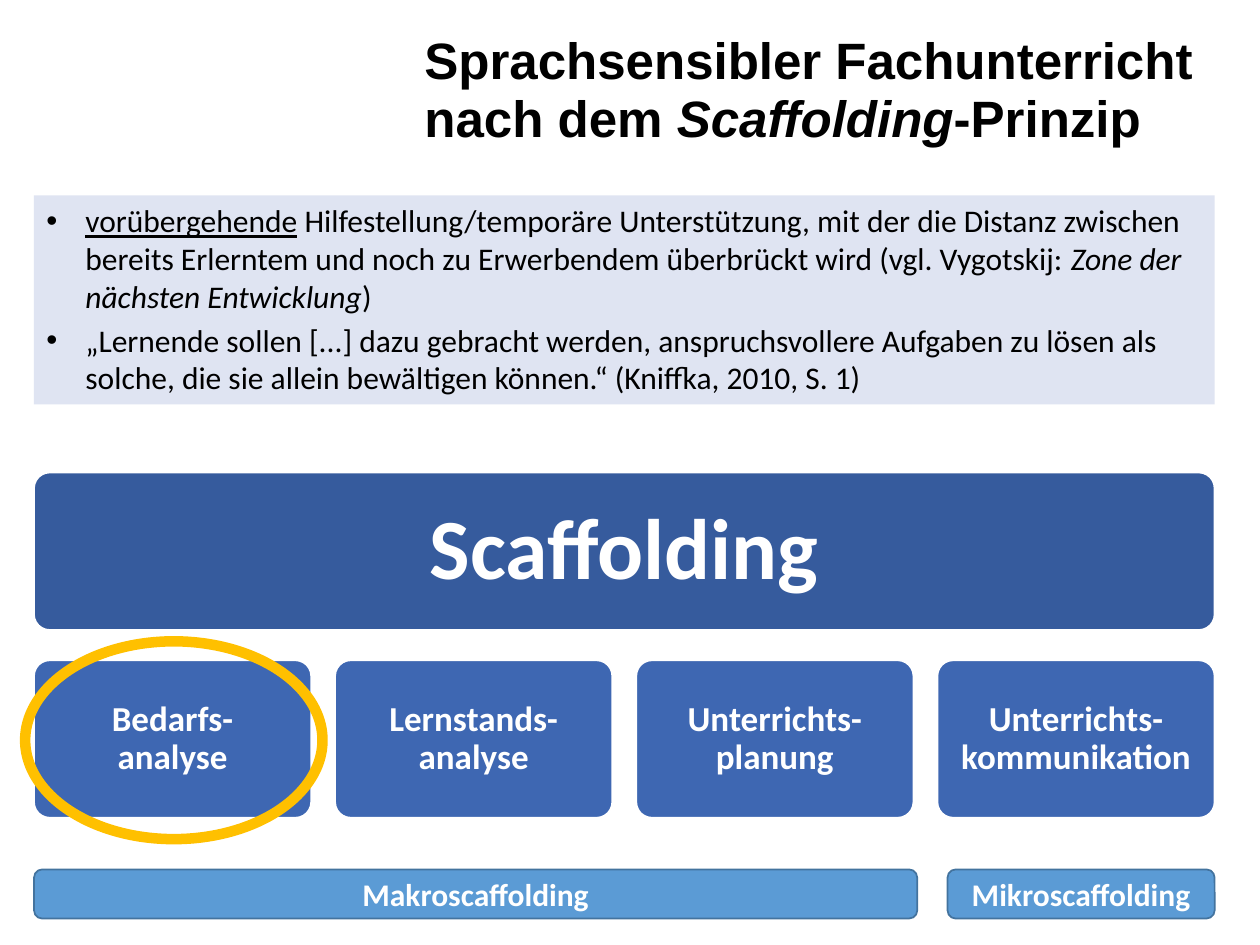
from dataclasses import dataclass

from lxml.etree import SubElement
from pptx import Presentation
from pptx.dml.color import RGBColor
from pptx.enum.shapes import MSO_SHAPE
from pptx.enum.text import MSO_ANCHOR, PP_ALIGN
from pptx.oxml.ns import qn
from pptx.util import Inches, Pt


@dataclass(frozen=True)
class Theme:
    black: str = "000000"
    white: str = "FFFFFF"
    definition: str = "DFE4F2"
    concept: str = "365B9D"
    step: str = "3E67B2"
    level: str = "5B9BD5"
    level_edge: str = "43739E"
    highlight: str = "FFC000"
    title_font: str = "Arial"
    body_font: str = "Calibri"
    title_size: float = 29.2
    concept_size: float = 49
    step_size: float = 20
    body_size: float = 18


THEME = Theme()
LEFT = 0.27
WIDTH = 9.37
STEP_WIDTH = 2.2
STEPS = [
    "Bedarfs-\nanalyse",
    "Lernstands-analyse",
    "Unterrichts-planung",
    "Unterrichts-kommunikation",
]
DEFINITIONS = [
    [
        ("vorübergehende", {"underline": True}),
        (" Hilfestellung/temporäre Unterstützung, mit der die Distanz zwischen "
         "bereits Erlerntem und noch zu Erwerbendem überbrückt wird "
         "(vgl. Vygotskij: ", {}),
        ("Zone der nächsten Entwicklung", {"italic": True}),
        (")", {}),
    ],
    [
        ("„Lernende sollen [...] dazu gebracht werden, anspruchsvollere Aufgaben "
         "zu lösen als solche, die sie allein bewältigen können.“ "
         "(Kniffka, 2010, S. 1)", {}),
    ],
]


def add_text(paragraph, text, *, size=THEME.body_size, color=THEME.black,
             font=THEME.body_font, bold=False, italic=False, underline=False):
    for index, line in enumerate(text.split("\n")):
        if index:
            paragraph.add_line_break()
        run = paragraph.add_run()
        run.text = line
        run.font.name = font
        run.font.size = Pt(size)
        run.font.bold = bold
        run.font.italic = italic
        run.font.underline = underline
        run.font.color.rgb = RGBColor.from_string(color)


def add_panel(slide, preset, box, fill=None, edge=None, edge_width=1, corner=None):
    panel = slide.shapes.add_shape(preset, *map(Inches, box))
    panel.shadow.inherit = False
    if corner is not None:
        panel.adjustments[0] = corner
    if fill:
        panel.fill.solid()
        panel.fill.fore_color.rgb = RGBColor.from_string(fill)
    else:
        panel.fill.background()
    if edge:
        panel.line.color.rgb = RGBColor.from_string(edge)
        panel.line.width = Pt(edge_width)
    else:
        panel.line.fill.background()
    return panel


def add_labelled_box(slide, box, label, fill, edge, size, corner, spacing, margin):
    panel = add_panel(slide, MSO_SHAPE.ROUNDED_RECTANGLE, box, fill, edge, corner=corner)
    frame = panel.text_frame
    frame.word_wrap = True
    frame.vertical_anchor = MSO_ANCHOR.MIDDLE
    frame.margin_left = frame.margin_right = Inches(margin)
    frame.margin_top = frame.margin_bottom = Inches(0.05)
    paragraph = frame.paragraphs[0]
    paragraph.alignment = PP_ALIGN.CENTER
    paragraph.line_spacing = spacing
    add_text(paragraph, label, size=size, color=THEME.white, bold=True)


def add_title(slide):
    title = slide.shapes.add_textbox(Inches(3.27), Inches(0.21), Inches(6.38), Inches(1.02))
    title.text_frame.word_wrap = True
    heading = title.text_frame.paragraphs[0]
    heading.line_spacing = 0.95
    for text, italic in [
        ("Sprachsensibler Fachunterricht nach dem ", False),
        ("Scaffolding", True),
        ("-Prinzip", False),
    ]:
        add_text(heading, text, size=THEME.title_size, font=THEME.title_font,
                 bold=True, italic=italic)


def make_bullet(paragraph):
    properties = paragraph._p.get_or_add_pPr()
    properties.set("marL", str(Inches(0.31)))
    properties.set("indent", str(Inches(-0.31)))
    SubElement(properties, qn("a:buFont")).set("typeface", THEME.title_font)
    SubElement(properties, qn("a:buChar")).set("char", "•")


def add_definitions(slide):
    panel = add_panel(slide, MSO_SHAPE.RECTANGLE, (LEFT, 1.55, WIDTH, 1.66), THEME.definition)
    frame = panel.text_frame
    frame.word_wrap = True
    frame.vertical_anchor = MSO_ANCHOR.TOP
    for index, passages in enumerate(DEFINITIONS):
        paragraph = frame.add_paragraph() if index else frame.paragraphs[0]
        make_bullet(paragraph)
        paragraph.alignment = PP_ALIGN.LEFT
        paragraph.space_after = Pt(3.3)
        for text, emphasis in passages:
            add_text(paragraph, text, **emphasis)


def add_scaffolding(slide):
    add_labelled_box(slide, (LEFT, 3.75, WIDTH, 1.25), "Scaffolding", THEME.concept,
                     THEME.white, THEME.concept_size, 0.1, 0.9, 0.2)
    pitch = (WIDTH - STEP_WIDTH) / (len(STEPS) - 1)
    for index, step in enumerate(STEPS):
        add_labelled_box(slide, (LEFT + index * pitch, 5.24, STEP_WIDTH, 1.25), step,
                         THEME.step, THEME.white, THEME.step_size, 0.1, 0.9, 0.08)


def add_levels(slide):
    for left, width, level in [(LEFT, 7.01, "Makroscaffolding"),
                               (7.52, 2.12, "Mikroscaffolding")]:
        add_labelled_box(slide, (left, 6.9, width, 0.39), level, THEME.level,
                         THEME.level_edge, THEME.body_size, 0.167, 1.0, 0.1)


def main():
    presentation = Presentation()
    presentation.slide_width = Inches(10)
    presentation.slide_height = Inches(7.5)
    slide = presentation.slides.add_slide(presentation.slide_layouts[6])
    add_title(slide)
    add_scaffolding(slide)
    add_definitions(slide)
    add_levels(slide)
    add_panel(slide, MSO_SHAPE.OVAL, (0.2, 5.09, 2.36, 1.57),
              edge=THEME.highlight, edge_width=6)
    presentation.save("out.pptx")


if __name__ == "__main__":
    main()
